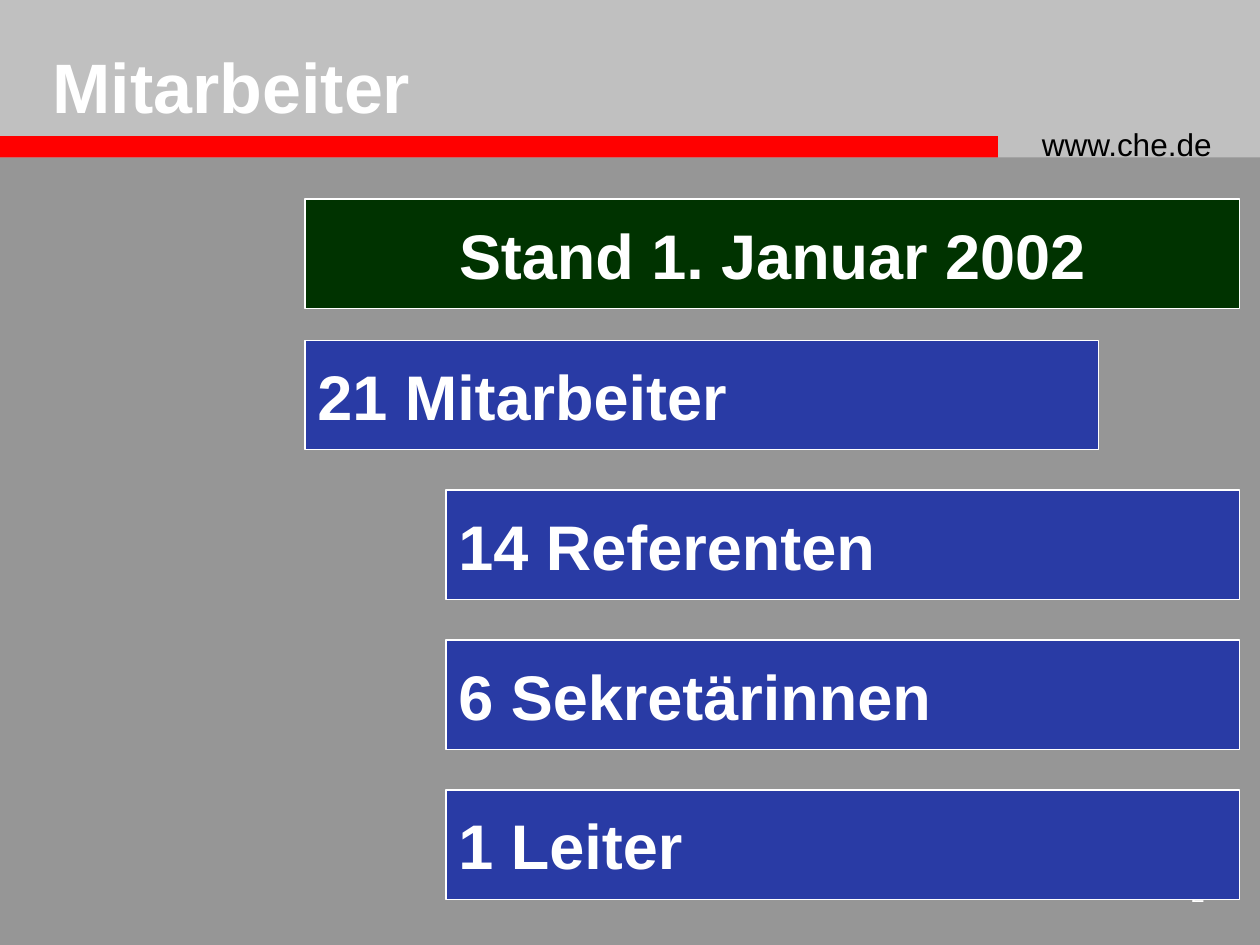
from dataclasses import dataclass

from pptx import Presentation
from pptx.dml.color import RGBColor
from pptx.enum.shapes import MSO_SHAPE
from pptx.enum.text import MSO_ANCHOR, PP_ALIGN
from pptx.util import Inches, Pt

RECT = MSO_SHAPE.RECTANGLE
TOP, MIDDLE = MSO_ANCHOR.TOP, MSO_ANCHOR.MIDDLE
LEFT, CENTER, RIGHT = PP_ALIGN.LEFT, PP_ALIGN.CENTER, PP_ALIGN.RIGHT

WIDTH, HEIGHT = 10, 7.5
COLORS = {
    "back": "969696", "head": "C0C0C0", "red": "FF0000", "blue": "293BA5",
    "green": "003300", "white": "FFFFFF", "black": "000000",
}

# Bars: two left edges (columns) and a common right edge
COLS = (2.42, 3.54)
EDGE = 9.84
BAR_H = 0.87
DATE_TOP = 1.58
STAFF_TOP, STEP = 2.7, 1.19
STAFF_W = EDGE - COLS[1]


@dataclass
class Box:
    left: float
    top: float
    width: float
    height: float


@dataclass
class Label:
    text: str
    size: int
    bold: bool = False
    color: str = "white"
    align: PP_ALIGN = LEFT
    anchor: MSO_ANCHOR = TOP


def color(name: str) -> RGBColor:
    return RGBColor.from_string(COLORS[name])


def place(box: Box) -> list[int]:
    return [Inches(v) for v in (box.left, box.top, box.width, box.height)]


def write(shape, label: Label) -> None:
    frame = shape.text_frame
    frame.word_wrap = True
    frame.vertical_anchor = label.anchor
    par = frame.paragraphs[0]
    par.alignment = label.align
    run = par.add_run()
    run.text = label.text
    style = {"name": "Arial", "size": Pt(label.size), "bold": label.bold}
    for key, value in style.items():
        setattr(run.font, key, value)
    run.font.color.rgb = color(label.color)


def add_rect(slide, box: Box, fill: str, line: str | None = None):
    shape = slide.shapes.add_shape(RECT, *place(box))
    shape.shadow.inherit = False
    shape.fill.solid()
    shape.fill.fore_color.rgb = color(fill)
    if line:
        shape.line.color.rgb = color(line)
        shape.line.width = Pt(0.75)
    else:
        shape.line.fill.background()
    return shape


def add_text(slide, box: Box, label: Label) -> None:
    write(slide.shapes.add_textbox(*place(box)), label)


def add_bar(slide, box: Box, fill: str, text: str, align: PP_ALIGN = LEFT) -> None:
    bar = add_rect(slide, box, fill, "white")
    write(bar, Label(text, 36, bold=True, align=align, anchor=MIDDLE))


def main() -> None:
    deck = Presentation()
    deck.slide_width, deck.slide_height = Inches(WIDTH), Inches(HEIGHT)
    slide = deck.slides.add_slide(deck.slide_layouts[6])
    slide.background.fill.solid()
    slide.background.fill.fore_color.rgb = color("back")

    add_rect(slide, Box(0, 0, WIDTH, HEIGHT / 6), "head")
    add_rect(slide, Box(0, 1.08, 7.92, 0.17), "red")
    add_text(slide, Box(8.17, 0.94, 1.75, 0.4), Label("www.che.de", 18, color="black"))
    add_text(slide, Box(9.08, 6.92, 0.58, 0.42), Label("2", 14, align=RIGHT))
    add_text(slide, Box(0.32, 0.3, 5.68, 0.75),
             Label("Mitarbeiter", 40, bold=True, anchor=MIDDLE))

    staff = ("21 Mitarbeiter", "14 Referenten", "6 Sekretärinnen", "1 Leiter")
    for row, text in enumerate(staff):
        left = COLS[min(row, 1)]
        add_bar(slide, Box(left, STAFF_TOP + row * STEP, STAFF_W, BAR_H), "blue", text)
    add_bar(slide, Box(COLS[0], DATE_TOP, EDGE - COLS[0], BAR_H), "green",
            "Stand 1. Januar 2002", CENTER)

    deck.save("out.pptx")


if __name__ == "__main__":
    main()
